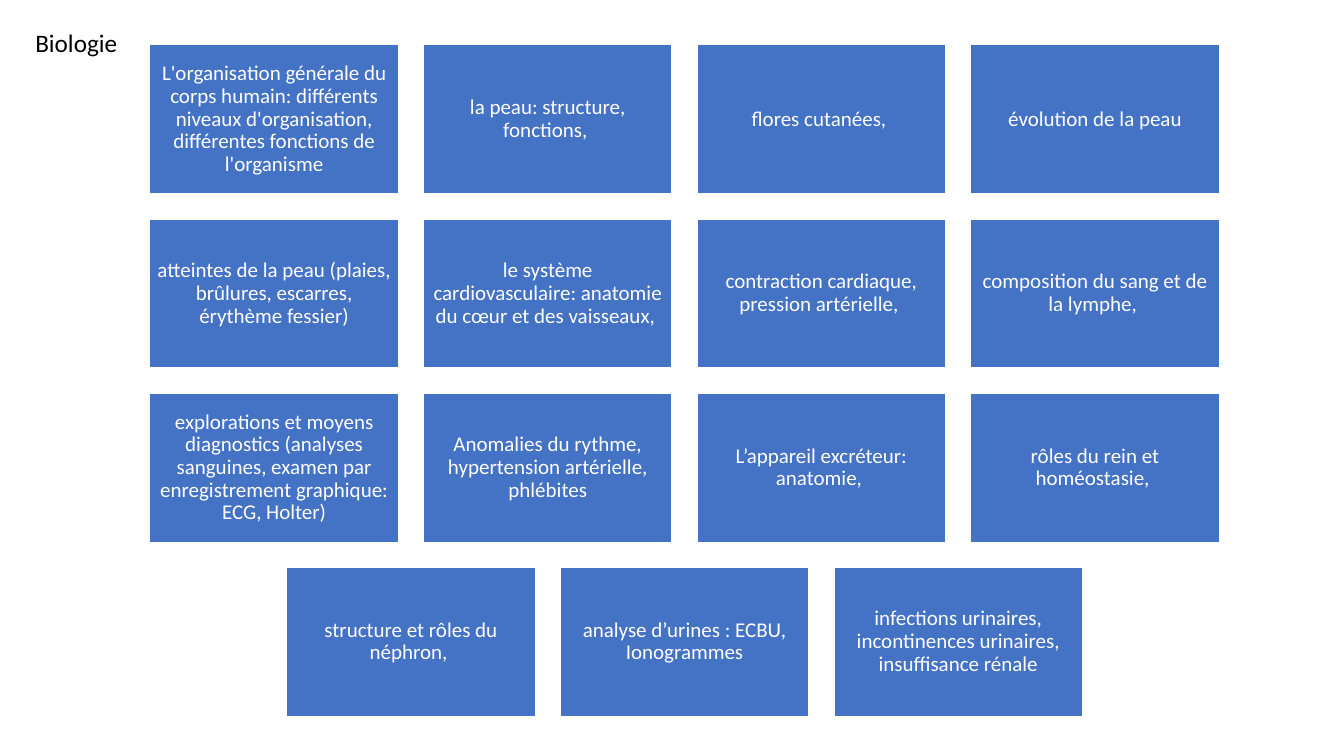
from dataclasses import dataclass

from pptx import Presentation
from pptx.dml.color import RGBColor
from pptx.enum.shapes import MSO_SHAPE
from pptx.enum.text import MSO_ANCHOR, MSO_AUTO_SIZE, PP_ALIGN
from pptx.util import Pt

RECTANGLE = MSO_SHAPE.RECTANGLE
TOP, MIDDLE = MSO_ANCHOR.TOP, MSO_ANCHOR.MIDDLE
LEFT, CENTER = PP_ALIGN.LEFT, PP_ALIGN.CENTER
FIT_SHAPE = MSO_AUTO_SIZE.SHAPE_TO_FIT_TEXT
TITLE_ONLY = 5


@dataclass(frozen=True)
class Theme:
    font: str = "Calibri"
    title_size: float = 18
    topic_size: float = 15
    ink: RGBColor = RGBColor(0x00, 0x00, 0x00)
    paper: RGBColor = RGBColor(0xFF, 0xFF, 0xFF)
    block: RGBColor = RGBColor(0x44, 0x72, 0xC4)


THEME = Theme()
COLUMNS = 4
GAP_RATIO = 0.1
HEIGHT_RATIO = 0.6

# The trailing spaces count in the centring of the last line.
TOPICS = [
    "L'organisation générale du corps humain: différents niveaux d'organisation, "
    "différentes fonctions de l'organisme",
    "la peau: structure, fonctions, ",
    "flores cutanées, ",
    "évolution de la peau",
    "atteintes de la peau (plaies, brûlures, escarres, érythème fessier)",
    "le système cardiovasculaire: anatomie du cœur et des vaisseaux, ",
    "contraction cardiaque, pression artérielle, ",
    "composition du sang et de la lymphe, ",
    "explorations et moyens diagnostics (analyses sanguines, examen par "
    "enregistrement graphique: ECG, Holter)",
    "Anomalies du rythme, hypertension artérielle, phlébites",
    "L’appareil excréteur: anatomie, ",
    "rôles du rein et homéostasie, ",
    "structure et rôles du néphron, ",
    "analyse d’urines : ECBU, Ionogrammes",
    "infections urinaires, incontinences urinaires, insuffisance rénale",
]


def style_paragraph(paragraph, size, color, alignment):
    paragraph.alignment = alignment
    paragraph.font.name = THEME.font
    paragraph.font.size = Pt(size)
    paragraph.font.color.rgb = color


def place_title(slide, text, left, top, width, height):
    title = slide.shapes.title
    title.left, title.top = Pt(left), Pt(top)
    title.width, title.height = Pt(width), Pt(height)
    frame = title.text_frame
    frame.text = text
    frame.word_wrap = True
    frame.auto_size = FIT_SHAPE
    frame.vertical_anchor = TOP
    style_paragraph(frame.paragraphs[0], THEME.title_size, THEME.ink, LEFT)


def add_topic(slide, text, left, top, width, height):
    shape = slide.shapes.add_shape(RECTANGLE, Pt(left), Pt(top), Pt(width), Pt(height))
    shape.shadow.inherit = False
    shape.fill.solid()
    shape.fill.fore_color.rgb = THEME.block
    shape.line.color.rgb = THEME.paper
    shape.line.width = Pt(1)
    frame = shape.text_frame
    frame.text = text
    frame.word_wrap = True
    frame.vertical_anchor = MIDDLE
    frame.margin_left = frame.margin_right = Pt(4.5)
    frame.margin_top = frame.margin_bottom = Pt(4.5)
    paragraph = frame.paragraphs[0]
    style_paragraph(paragraph, THEME.topic_size, THEME.paper, CENTER)
    paragraph.line_spacing = 0.9
    paragraph.space_after = Pt(0.35 * THEME.topic_size)


def add_topic_grid(slide, topics, left, top, width):
    """Fill rows of equal blocks; a shorter last row is centred."""
    block_width = width / (COLUMNS + (COLUMNS - 1) * GAP_RATIO)
    block_height = block_width * HEIGHT_RATIO
    gap = block_width * GAP_RATIO
    for start in range(0, len(topics), COLUMNS):
        row = topics[start:start + COLUMNS]
        row_left = left + (COLUMNS - len(row)) * (block_width + gap) / 2
        row_top = top + start // COLUMNS * (block_height + gap)
        for column, topic in enumerate(row):
            topic_left = row_left + column * (block_width + gap)
            add_topic(slide, topic, topic_left, row_top, block_width, block_height)


def main():
    presentation = Presentation()
    presentation.slide_width, presentation.slide_height = Pt(960), Pt(540)
    slide = presentation.slides.add_slide(presentation.slide_layouts[TITLE_ONLY])
    add_topic_grid(slide, TOPICS, left=107, top=32, width=764)
    place_title(slide, "Biologie", left=18, top=16, width=76, height=29)
    presentation.save("out.pptx")


if __name__ == "__main__":
    main()
